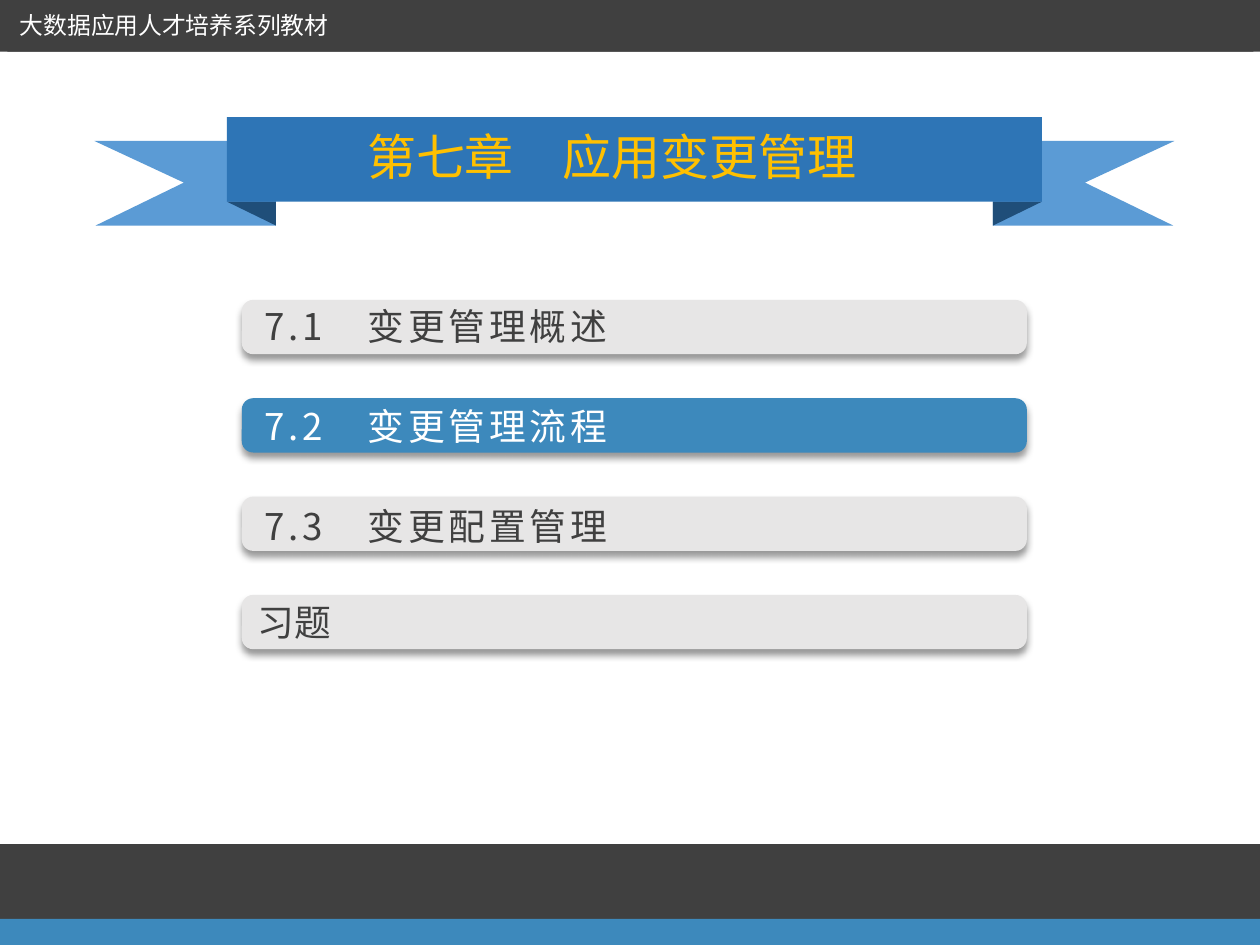
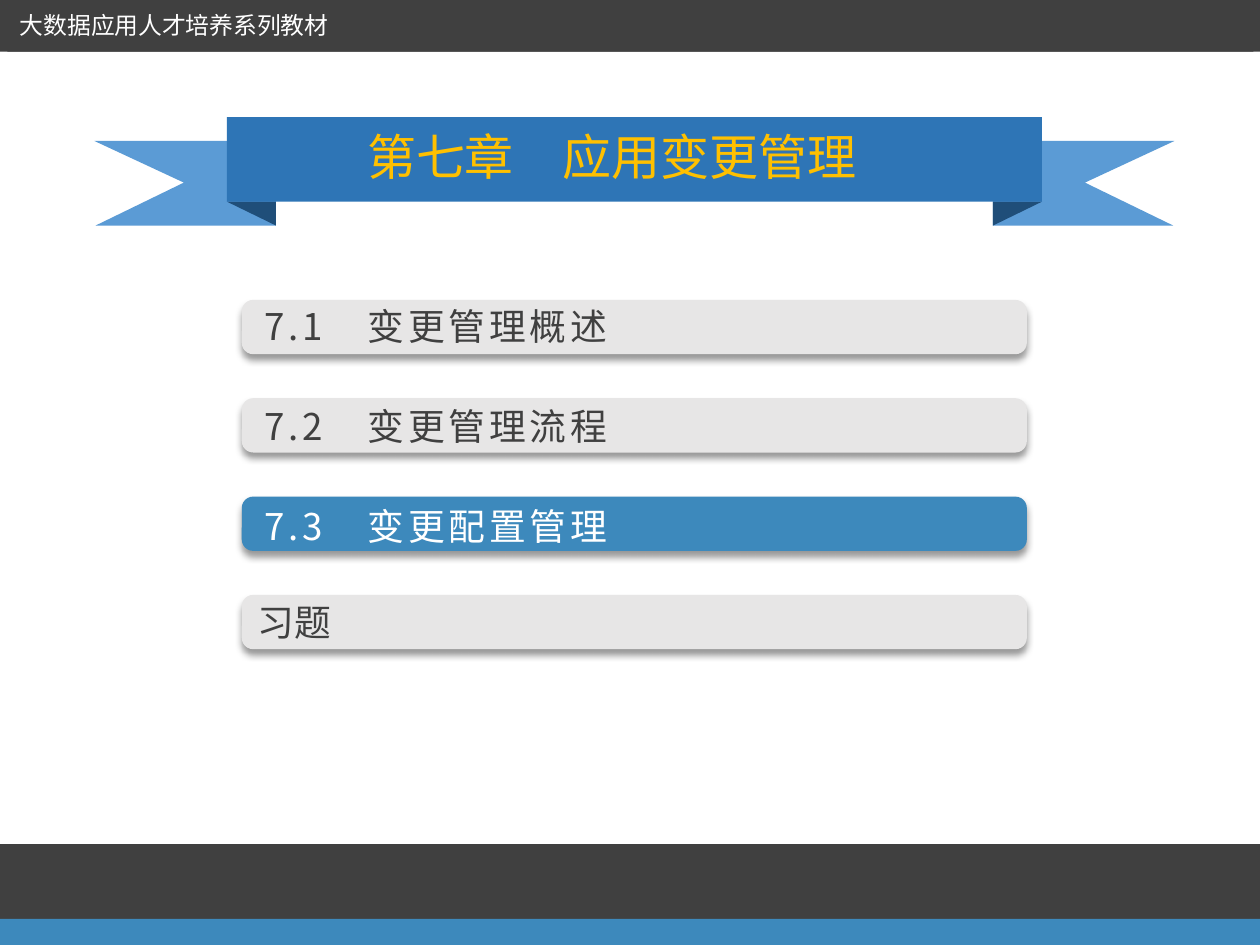
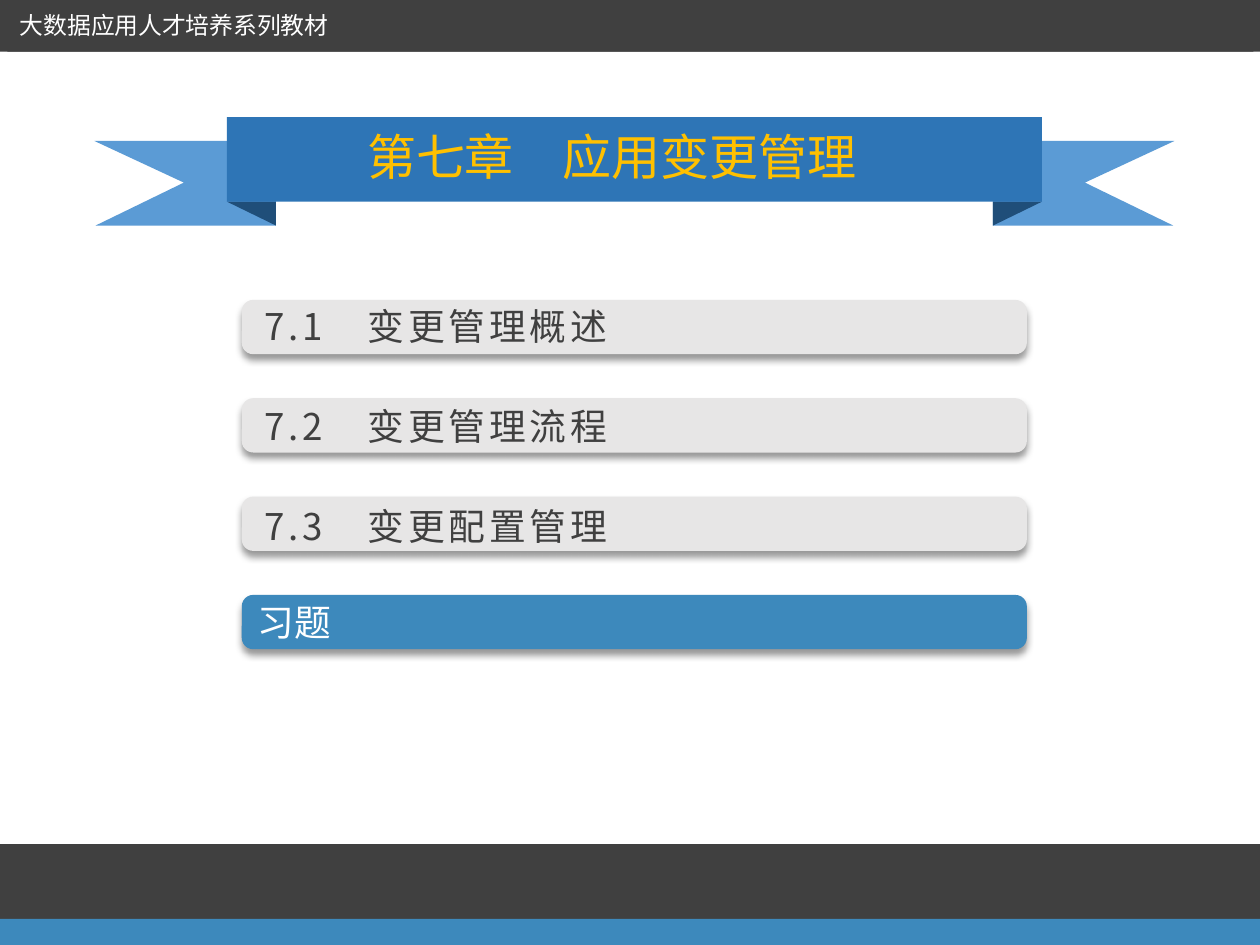
from dataclasses import dataclass

from lxml.etree import SubElement
from pptx import Presentation
from pptx.dml.color import RGBColor
from pptx.enum.shapes import MSO_SHAPE
from pptx.enum.text import MSO_ANCHOR, MSO_AUTO_SIZE, PP_ALIGN
from pptx.oxml.ns import qn
from pptx.util import Pt


@dataclass(frozen=True)
class Theme:
    """Colours, fonts and type sizes shared by all slides."""
    dark: str = "404040"
    accent: str = "3D89BC"
    pale: str = "E7E6E6"
    white: str = "FFFFFF"
    gold: str = "FFC000"
    ribbon: str = "2E75B6"
    ribbon_tail: str = "5B9BD5"
    ribbon_fold: str = "1F4E79"
    latin: str = "Arial"
    cjk: str = "Noto Sans CJK SC"
    title_size: float = 28
    entry_size: float = 21
    series_size: float = 13.6
    entry_spacing: float = 2.2


THEME = Theme()
SERIES = "大数据应用人才培养系列教材"
CHAPTER = "第七章　应用变更管理"
SECTIONS = ["7.1　变更管理概述", "7.2　变更管理流程", "7.3　变更配置管理"]
EXERCISES = "习题"
ENTRY_LEFT, ENTRY_TOP, ENTRY_PITCH = 138.2, 171.4, 56.2
ENTRY_SIZE = (448.6, 31)
LABEL_LEFT, LABEL_TOP, LABEL_PITCH = 144, 169.9, 57.25
LABEL_SIZE = (216, 32.4)
RIBBON_MIRROR = 725.1
TAIL = [(54, 80.6), (157.7, 80.6), (157.7, 128.9), (54.7, 128.9), (105.1, 104.4)]
FOLDS = [((129.6, 115.2, 28.1, 13.7), 180), ((574.6, 108, 13.7, 28.1), 90)]
FLOATING = {"word_wrap": False, "auto_size": MSO_AUTO_SIZE.SHAPE_TO_FIT_TEXT,
            "vertical_anchor": MSO_ANCHOR.TOP}
CENTRED = {"word_wrap": True, "vertical_anchor": MSO_ANCHOR.MIDDLE}


def apply_format(target, values):
    """Set every attribute named in values on target."""
    for attribute, value in values.items():
        setattr(target, attribute, value)


def paint(shape, colour):
    """Give a shape a plain fill without outline or shadow."""
    shape.shadow.inherit = False
    shape.fill.solid()
    shape.fill.fore_color.rgb = RGBColor.from_string(colour)
    shape.line.fill.background()


def add_block(shapes, box, colour, kind=MSO_SHAPE.RECTANGLE):
    """Add a filled preset shape whose box is in points."""
    block = shapes.add_shape(kind, *map(Pt, box))
    paint(block, colour)
    return block


def write(shape, text, size, colour, frame_format, font=THEME.latin,
          align=PP_ALIGN.LEFT, spacing=0):
    """Put one formatted line of text into a shape."""
    apply_format(shape.text_frame, frame_format)
    line = shape.text_frame.paragraphs[0]
    line.alignment = align
    run = line.add_run()
    run.text = text
    apply_format(run.font, {"name": font, "size": Pt(size), "bold": False})
    run.font.color.rgb = RGBColor.from_string(colour)
    properties = run.font._element
    SubElement(properties, qn("a:ea"), typeface=THEME.cjk)
    if spacing:
        properties.set("spc", str(round(spacing * 100)))


def cast_shadow(shape):
    """Add a soft black shadow below a shape."""
    effects = shape.element.spPr.find(qn("a:effectLst"))
    shadow = SubElement(effects, qn("a:outerShdw"), blurRad=str(Pt(4)), dist=str(Pt(3)),
                        dir="5400000", algn="t", rotWithShape="0")
    black = SubElement(shadow, qn("a:srgbClr"), val="000000")
    SubElement(black, qn("a:alpha"), val="40000")


def add_tail(shapes, outline):
    """Add one notched end of the ribbon."""
    start, *corners = [(Pt(x), Pt(y)) for x, y in outline]
    builder = shapes.build_freeform(*start)
    builder.add_line_segments(corners, close=True)
    paint(builder.convert_to_shape(), THEME.ribbon_tail)


def add_ribbon(slide):
    """Draw the ribbon and lay the chapter title on it."""
    ribbon = slide.shapes.add_group_shape()
    add_tail(ribbon.shapes, TAIL)
    add_tail(ribbon.shapes, [(RIBBON_MIRROR - x, y) for x, y in TAIL])
    for box, rotation in FOLDS:
        fold = add_block(ribbon.shapes, box, THEME.ribbon_fold, MSO_SHAPE.RIGHT_TRIANGLE)
        fold.rotation = rotation
    add_block(ribbon.shapes, (129.6, 67, 465.8, 48.2), THEME.ribbon)

    title = slide.shapes.title
    apply_format(title, {"left": Pt(200.9), "top": Pt(68.4),
                         "width": Pt(297.4), "height": Pt(41)})
    write(title, CHAPTER, THEME.title_size, THEME.gold, FLOATING, align=PP_ALIGN.CENTER)
    ribbon.element.addnext(title.element)


def add_entry_bar(shapes, row, active):
    """Add the rounded bar of one contents row."""
    box = (ENTRY_LEFT, ENTRY_TOP + row * ENTRY_PITCH, *ENTRY_SIZE)
    bar = add_block(shapes, box, THEME.accent if active else THEME.pale,
                    MSO_SHAPE.ROUNDED_RECTANGLE)
    bar.adjustments[0] = 0.21
    cast_shadow(bar)
    return bar


def add_contents(slide, current):
    """List the sections and the exercises, highlighting the current row."""
    for row, section in enumerate([*SECTIONS, EXERCISES]):
        active = row == current
        colour = THEME.white if active else THEME.dark
        if section == EXERCISES:
            bar = add_entry_bar(slide.shapes, row, active)
            write(bar, section, THEME.entry_size, colour, CENTRED)
            continue
        entry = slide.shapes.add_group_shape().shapes
        add_entry_bar(entry, row, active)
        box = (LABEL_LEFT, LABEL_TOP + row * LABEL_PITCH, *LABEL_SIZE)
        label = entry.add_textbox(*map(Pt, box))
        write(label, section, THEME.entry_size, colour, FLOATING,
              font=THEME.cjk, spacing=THEME.entry_spacing)


def add_bands(slide):
    """Draw the header with the series name and the two footer bands."""
    add_block(slide.shapes, (-0.7, -0.7, 721.4, 30.2), THEME.dark)
    add_block(slide.shapes, (0, 482.4, 720, 43.2), THEME.dark)
    add_block(slide.shapes, (0, 525, 720, 15), THEME.accent)
    series = add_block(slide.shapes, (4.3, -0.7, 712, 30.2), THEME.dark)
    write(series, SERIES, THEME.series_size, THEME.white, CENTRED)


def main():
    """Build one contents slide for each row after the first."""
    deck = Presentation()
    apply_format(deck, {"slide_width": Pt(720), "slide_height": Pt(540)})
    title_only = deck.slide_layouts[5]
    for current in range(1, len(SECTIONS) + 1):
        slide = deck.slides.add_slide(title_only)
        add_ribbon(slide)
        add_contents(slide, current)
        add_bands(slide)
    deck.save("out.pptx")


if __name__ == "__main__":
    main()
